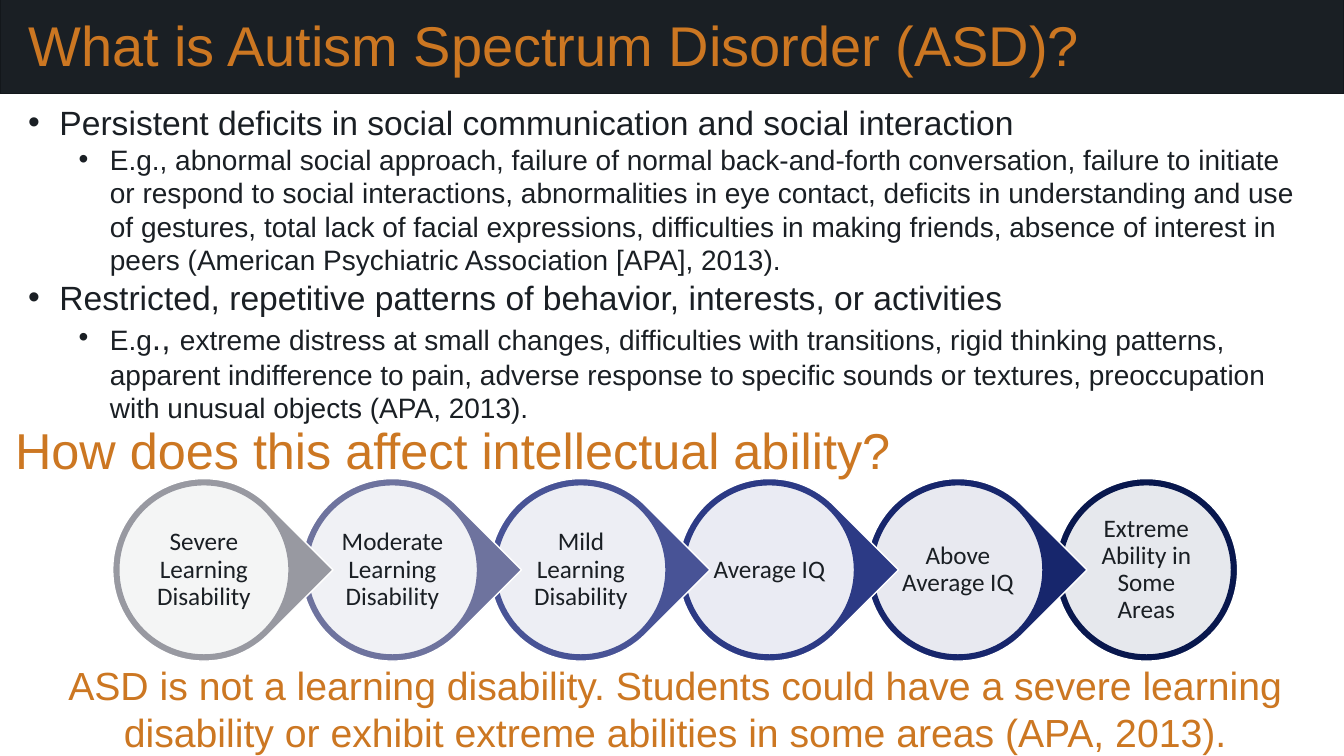
from lxml.etree import SubElement
from pptx import Presentation
from pptx.dml.color import RGBColor
from pptx.enum.shapes import MSO_SHAPE
from pptx.enum.text import MSO_ANCHOR, MSO_AUTO_SIZE, PP_ALIGN
from pptx.oxml.ns import qn
from pptx.util import Cm, Pt

COLOURS = {"ink": "1A1F24", "bar edge": "13171B", "ochre": "CC7722", "white": "FFFFFF"}
ABILITIES = [
    ("Severe Learning Disability", "9899A1"),
    ("Moderate Learning Disability", "6E739E"),
    ("Mild Learning Disability", "485396"),
    ("Average IQ", "2C3A85"),
    ("Above Average IQ", "17266C"),
    ("Extreme Ability in Some Areas", "08174D"),
]
CRITERIA = [
    (0, [("Persistent deficits in social communication and social interaction", 24)]),
    (1, [("E.g., abnormal social approach, failure of normal back-and-forth conversation, "
          "failure to initiate or respond to social interactions, abnormalities in eye contact, "
          "deficits in understanding and use of gestures, total lack of facial expressions, "
          "difficulties in making friends, absence of interest in peers "
          "(American Psychiatric Association [APA], 2013).", 20)]),
    (0, [("Restricted, repetitive patterns of behavior, interests, or activities", 24)]),
    (1, [("E.g", 20), ("., ", 24),
         ("extreme distress at small changes, difficulties with transitions, rigid thinking "
          "patterns, apparent indifference to pain, adverse response to specific sounds or "
          "textures, preoccupation with unusual objects (APA, 2013).", 20)]),
]

prs = Presentation()
prs.slide_width, prs.slide_height = Cm(33.87), Cm(19.05)
slide = prs.slides.add_slide(prs.slide_layouts[5])
shapes = slide.shapes


def add_filled(preset, left, top, width, height, fill, line):
    shape = shapes.add_shape(preset, Cm(left), Cm(top), Cm(width), Cm(height))
    shape.shadow.inherit = False
    shape.fill.solid()
    shape.fill.fore_color.rgb = RGBColor.from_string(fill)
    shape.line.color.rgb = RGBColor.from_string(line)
    shape.line.width = Pt(1)
    return shape


def add_run(paragraph, text, size, colour, font="Arial"):
    run = paragraph.add_run()
    run.text = text
    run.font.size = Pt(size)
    run.font.name = font
    run.font.color.rgb = RGBColor.from_string(colour)


# Header bar and title
header = add_filled(MSO_SHAPE.RECTANGLE, 0, -0.18, 33.87, 2.54,
                    COLOURS["ink"], COLOURS["bar edge"])
title = shapes.title
header._element.addnext(title._element)
title.left, title.top, title.width, title.height = Cm(0.46), Cm(0.15), Cm(32.74), Cm(1.96)
title.text_frame.auto_size = MSO_AUTO_SIZE.NONE
title.text_frame.vertical_anchor = MSO_ANCHOR.TOP
title_line = title.text_frame.paragraphs[0]
title_line.alignment = PP_ALIGN.LEFT
add_run(title_line, "What is Autism Spectrum Disorder (ASD)?", 40, COLOURS["ochre"])

# Spectrum, from right to left so that each point overlaps the next circle
disc_size, drop_size, label_size = 4.29, 4.6, 3.07
middle = 14.36
for index, (ability, colour) in reversed(list(enumerate(ABILITIES))):
    centre = 5.14 + 4.75 * index
    is_last = index == len(ABILITIES) - 1
    drop = add_filled(MSO_SHAPE.OVAL if is_last else MSO_SHAPE.TEAR,
                      centre - drop_size / 2, middle - drop_size / 2,
                      drop_size, drop_size, colour, COLOURS["white"])
    drop.rotation = 0 if is_last else 45
    disc = add_filled(MSO_SHAPE.OVAL, centre - disc_size / 2, middle - disc_size / 2,
                      disc_size, disc_size, COLOURS["white"], colour)
    disc_colour = disc._element.spPr.find(qn("a:solidFill")).find(qn("a:srgbClr"))
    SubElement(disc_colour, qn("a:alpha"), val="90000")

    label = shapes.add_textbox(Cm(centre - label_size / 2), Cm(middle - label_size / 2),
                               Cm(label_size), Cm(label_size)).text_frame
    label.word_wrap = True
    label.vertical_anchor = MSO_ANCHOR.MIDDLE
    label.margin_left = label.margin_right = label.margin_top = label.margin_bottom = Cm(0.08)
    label_line = label.paragraphs[0]
    label_line.alignment = PP_ALIGN.CENTER
    label_line.line_spacing = 0.9
    add_run(label_line, ability, 18, COLOURS["ink"], "Calibri")

# Diagnostic criteria
criteria = shapes.add_textbox(Cm(0.46), Cm(2.44), Cm(32.74), Cm(9.32)).text_frame
criteria.word_wrap = True
for index, (level, parts) in enumerate(CRITERIA):
    criterion = criteria.add_paragraph() if index else criteria.paragraphs[0]
    criterion.level = level
    properties = criterion._p.get_or_add_pPr()
    properties.set("marL", str(Cm(0.79 + 1.27 * level)))
    properties.set("indent", str(-Cm(0.79)))
    SubElement(properties, qn("a:buFont"), typeface="Arial")
    SubElement(properties, qn("a:buChar"), char="•")
    for text, size in parts:
        add_run(criterion, text, size, COLOURS["ink"])

# Question above the spectrum and conclusion below it
question = shapes.add_textbox(Cm(0.13), Cm(10.44), Cm(32.74), Cm(1.8)).text_frame
question.word_wrap = True
add_run(question.paragraphs[0], "How does this affect intellectual ability?", 36,
        COLOURS["ochre"])

conclusion = shapes.add_textbox(Cm(0.69), Cm(16.54), Cm(32.64), Cm(2.5)).text_frame
conclusion.word_wrap = True
conclusion.paragraphs[0].alignment = PP_ALIGN.CENTER
add_run(conclusion.paragraphs[0],
        "ASD is not a learning disability. Students could have a severe learning disability "
        "or exhibit extreme abilities in some areas (APA, 2013).", 28, COLOURS["ochre"])

prs.save("out.pptx")
